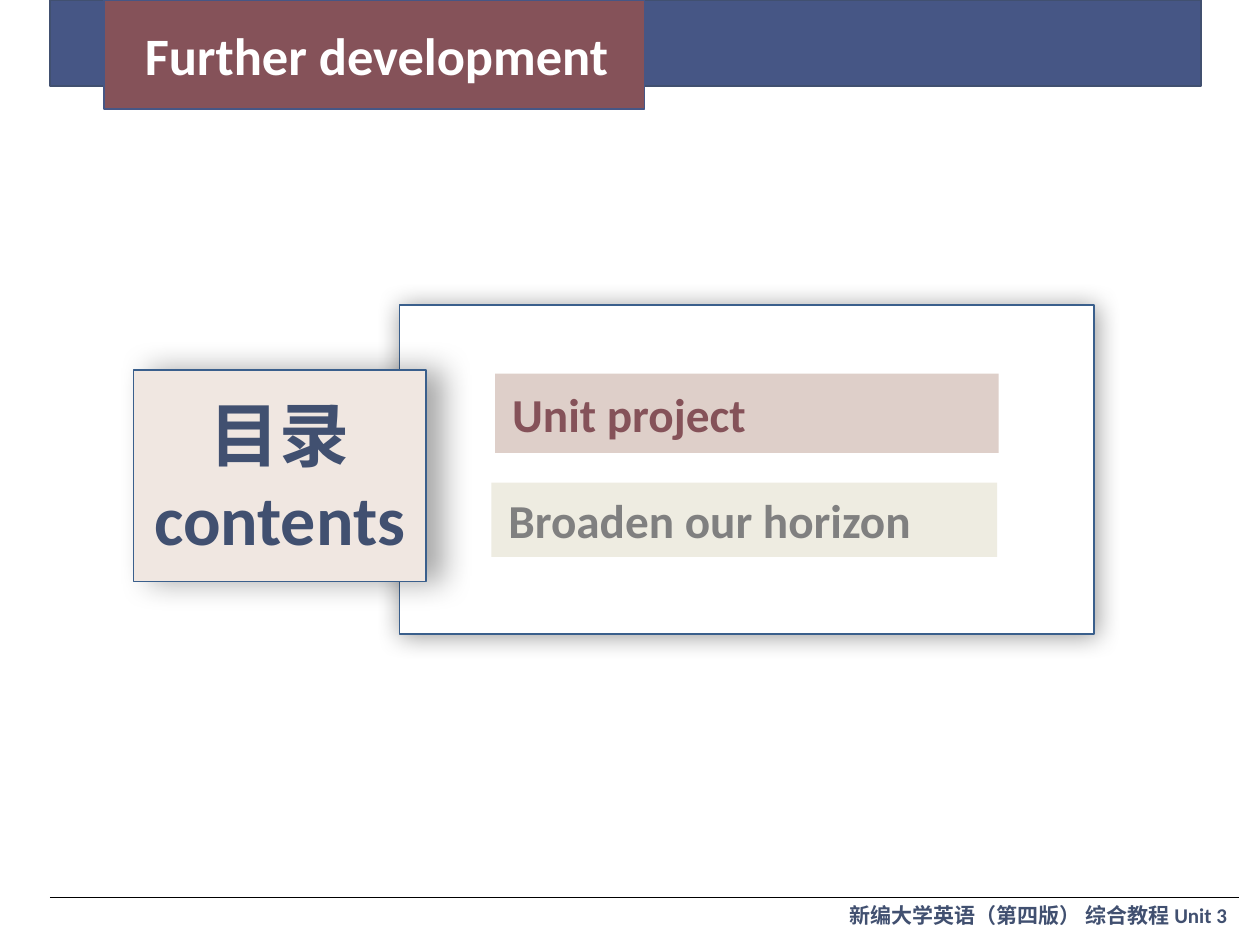
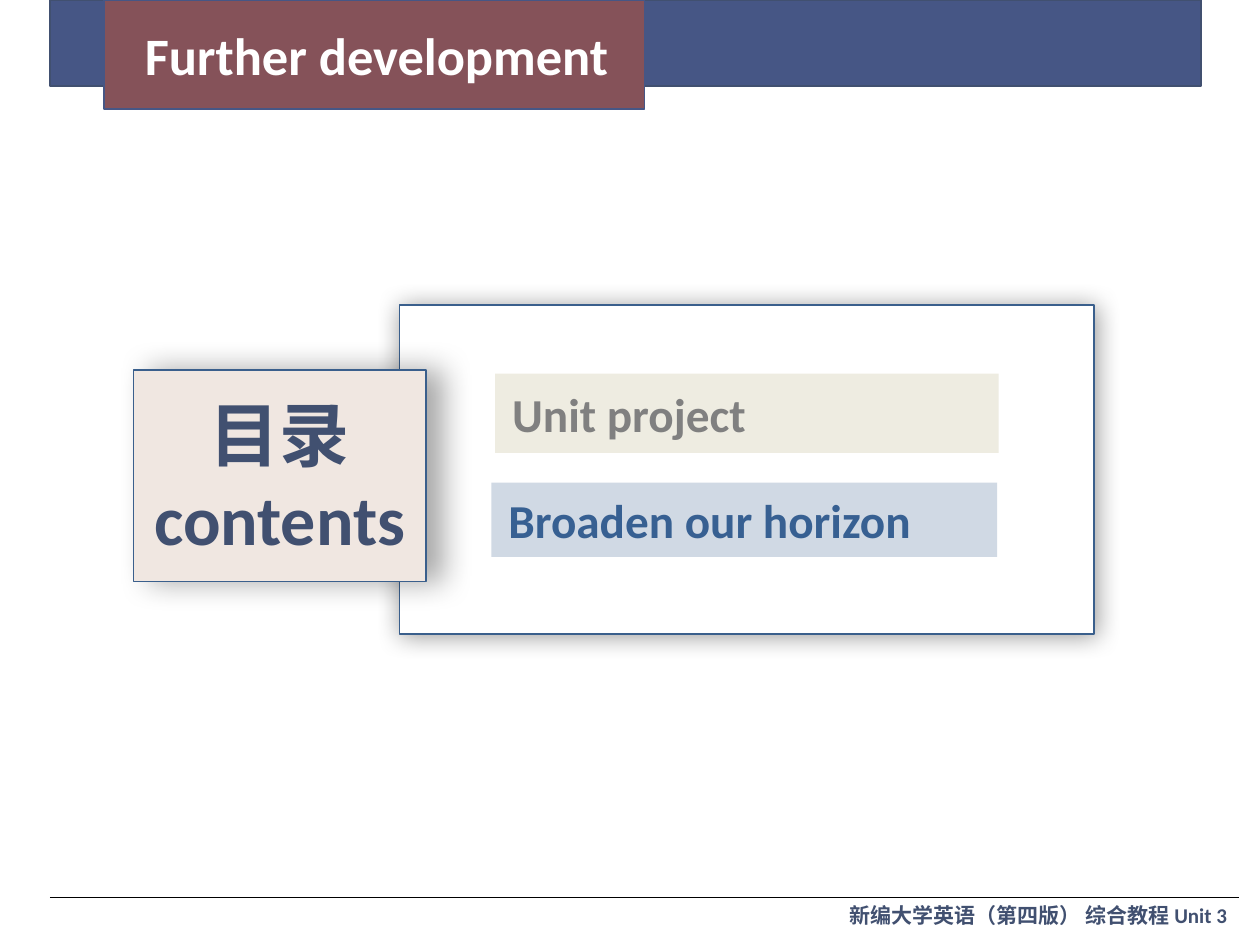
from dataclasses import dataclass

from lxml import etree
from pptx import Presentation
from pptx.dml.color import RGBColor
from pptx.enum import shapes, text
from pptx.oxml import ns
from pptx.util import Inches, Pt


@dataclass(frozen=True)
class Theme:
    navy: str = "465685"
    ink: str = "415070"
    wine: str = "855259"
    edge: str = "3A5F8C"
    white: str = "FFFFFF"
    black: str = "000000"
    cream: str = "F0E7E1"
    rose: str = "DECFC9"
    sky: str = "D0D9E4"
    blue: str = "376092"
    idle_fill: str = "EEECE1"
    idle_text: str = "808080"
    latin: str = "Calibri"
    footer: str = "Arial"
    cjk: str = "Noto Sans CJK SC"
    title_size: int = 60
    contents_size: int = 80
    item_size: int = 54
    footer_size: int = 24


T = Theme()


def add_box(s, at, fill, line=None, shadow=None):
    """Rectangle; shadow is (opacity %, blur pt, distance pt, angle)."""
    sp = s.shapes.add_shape(shapes.MSO_SHAPE.RECTANGLE, *map(Inches, at))
    sp.shadow.inherit = False
    sp.fill.solid()
    sp.fill.fore_color.rgb = RGBColor.from_string(fill)
    if line:
        sp.line.color.rgb = RGBColor.from_string(line)
        sp.line.width = Pt(2)
    else:
        sp.line.fill.background()
    if shadow:
        alpha, blur, dist, angle = shadow
        effects = sp._element.spPr.find(ns.qn("a:effectLst"))
        outer = etree.SubElement(
            effects, ns.qn("a:outerShdw"), blurRad=str(Pt(blur)),
            dist=str(Pt(dist)), dir=str(angle * 60000), rotWithShape="0")
        color = etree.SubElement(outer, ns.qn("a:srgbClr"), val=T.black)
        etree.SubElement(color, ns.qn("a:alpha"), val=str(alpha * 1000))
    return sp


def add_run(p, words, size, color, font=T.latin):
    r = p.add_run()
    r.text = words
    r.font.size = Pt(size)
    r.font.bold = True
    r.font.name = font
    r.font.color.rgb = RGBColor.from_string(color)
    etree.SubElement(r.font._element, ns.qn("a:ea"), typeface=T.cjk)


prs = Presentation()
prs.slide_width, prs.slide_height = Inches(20), Inches(15)

items = [
    ("Unit project", (7.86, 5.93, 7.99, 1.26), (T.rose, T.wine)),
    ("Broaden our horizon", (7.8, 7.66, 8.03, 1.18), (T.sky, T.blue)),
]

# One slide per highlighted item
for active in range(len(items)):
    s = prs.slides.add_slide(prs.slide_layouts[6])

    # Title band
    add_box(s, (0.79, 0, 18.27, 1.36), T.navy, T.ink)
    add_box(s, (1.65, 0, 8.58, 1.73), T.wine, T.navy)
    tf = s.shapes.add_textbox(*map(Inches, (2.2, 0.32, 8.62, 1.11))).text_frame
    tf.word_wrap = True
    add_run(tf.paragraphs[0], "Further development", T.title_size, T.white)

    # Contents panel and its label
    add_box(s, (6.34, 4.84, 11.03, 5.22), T.white, T.edge, (40, 29, 3, 45))
    tf = add_box(s, (2.12, 5.87, 4.64, 3.36), T.cream, T.edge,
                 (34, 35, 18, 0)).text_frame
    tf.vertical_anchor = text.MSO_ANCHOR.MIDDLE
    label = [("目录", T.cjk), ("contents", T.latin)]
    for i, (words, font) in enumerate(label):
        p = tf.add_paragraph() if i else tf.paragraphs[0]
        p.alignment = text.PP_ALIGN.CENTER
        add_run(p, words, T.contents_size, T.ink, font)

    # Items: only the active one is coloured
    for i, (words, at, highlight) in enumerate(items):
        fill, color = highlight if i == active else (T.idle_fill, T.idle_text)
        tf = add_box(s, at, fill).text_frame
        tf.vertical_anchor = text.MSO_ANCHOR.MIDDLE
        tf.margin_left = Inches(0.27)
        p = tf.paragraphs[0]
        p.alignment = text.PP_ALIGN.LEFT
        add_run(p, words, T.item_size, color)

    # Footer
    tf = s.shapes.add_textbox(*map(Inches, (13.39, 14.27, 6.6, 0.5))).text_frame
    tf.word_wrap = True
    p = tf.paragraphs[0]
    add_run(p, "新编大学英语（第四版） 综合教程 ", T.footer_size, T.ink, T.footer)
    add_run(p, "Unit 3", T.footer_size, T.ink)
    rule = s.shapes.add_connector(shapes.MSO_CONNECTOR.STRAIGHT,
                                  *map(Inches, (0.79, 14.24, 19.66, 14.24)))
    rule.line.color.rgb = RGBColor.from_string(T.black)
    rule.line.width = Pt(0.75)
    etree.SubElement(rule._element.spPr, ns.qn("a:effectLst"))

prs.save("out.pptx")
